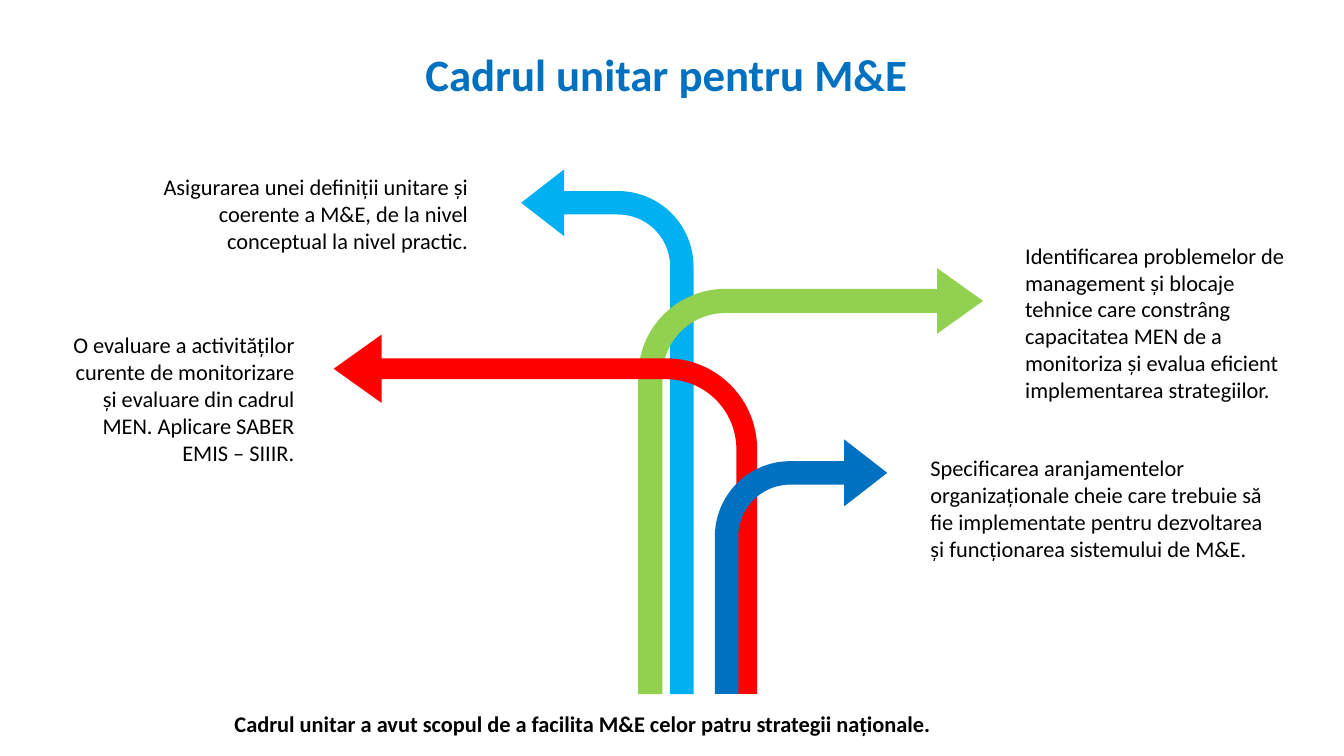
from pptx import Presentation
from pptx.dml.color import RGBColor
from pptx.enum.shapes import MSO_SHAPE as Shape
from pptx.enum.text import MSO_AUTO_SIZE as AutoSize, PP_ALIGN as Align
from pptx.util import Inches

from pptx.util import Pt

deck = Presentation()
deck.slide_width = Inches(13.33)
deck.slide_height = Inches(7.5)
slide = deck.slides.add_slide(deck.slide_layouts[6])
COLUMN = deck.slide_width / 100
ROW = deck.slide_height / 100


def color(value):
    return RGBColor.from_string(value)


def write(text, at, size=16, ink="000000", bold=False, align=Align.LEFT, wrap=True):
    left, top, width, height = at
    box = slide.shapes.add_textbox(
        round(left * COLUMN), round(top * ROW), round(width * COLUMN), round(height * ROW)
    )
    frame = box.text_frame
    frame.word_wrap = wrap
    frame.auto_size = AutoSize.SHAPE_TO_FIT_TEXT
    paragraph = frame.paragraphs[0]
    paragraph.alignment = align
    run = paragraph.add_run()
    run.text = text
    run.font.name = "Calibri"
    run.font.size = Pt(size)
    run.font.bold = bold
    run.font.color.rgb = color(ink)


BASE = 91.8
SHORT_BEND = (0.136, 0.194, 0.25, 0.438)
GREEN_BEND = (0.07, 0.095, 0.133, 0.253)
RED_BEND = (0.058, 0.095, 0.133, 0.253)
roads = [
    (38.78, 22.4, 12.83, "00B0F0", SHORT_BEND, True),
    (47.49, 35.47, 25.66, "92D050", GREEN_BEND, False),
    (24.83, 44.27, 31.51, "FF0000", RED_BEND, True),
    (53.19, 58.13, 12.83, "0070C0", SHORT_BEND, False),
]
for left, top, width, fill, bend, turns_left in roads:
    road = slide.shapes.add_shape(
        Shape.BENT_ARROW,
        round(left * COLUMN),
        round(top * ROW),
        round(width * COLUMN),
        round((BASE - top) * ROW),
    )
    for index, share in enumerate(bend):
        road.adjustments[index] = share
    if turns_left:
        road.element.spPr.get_or_add_xfrm().set("flipH", "1")
    road.shadow.inherit = False
    road.fill.solid()
    road.fill.fore_color.rgb = color(fill)
    road.line.fill.background()

goals = [
    ("Specificarea aranjamentelor organizaționale cheie care trebuie să fie "
     "implementate pentru dezvoltarea și funcționarea sistemului de M&E.",
     (68.49, 59.47, 26.63, 15.73), Align.LEFT),
    ("O evaluare a activităților curente de monitorizare și evaluare din cadrul "
     "MEN. Aplicare SABER EMIS – SIIIR.",
     (3.75, 43.2, 18.9, 22.93), Align.RIGHT),
    ("Identificarea problemelor de management și blocaje tehnice care constrâng "
     "capacitatea MEN de a monitoriza și evalua eficient implementarea strategiilor.",
     (75.54, 31.33, 21.38, 22.93), Align.LEFT),
    ("Asigurarea unei definiții unitare și coerente a M&E, de la nivel conceptual "
     "la nivel practic.",
     (9.75, 22.27, 25.81, 12.13), Align.RIGHT),
]
for goal, place, side in goals:
    write(goal, place, align=side)

write("Cadrul unitar pentru M&E", (30.76, 5.47, 37.66, 8.53),
      size=32, ink="0070C0", bold=True, align=Align.CENTER, wrap=False)
write("Cadrul unitar a avut scopul de a facilita M&E celor patru strategii naționale.",
      (9, 93.33, 68.72, 4.93), bold=True, align=Align.CENTER)

deck.save("out.pptx")
